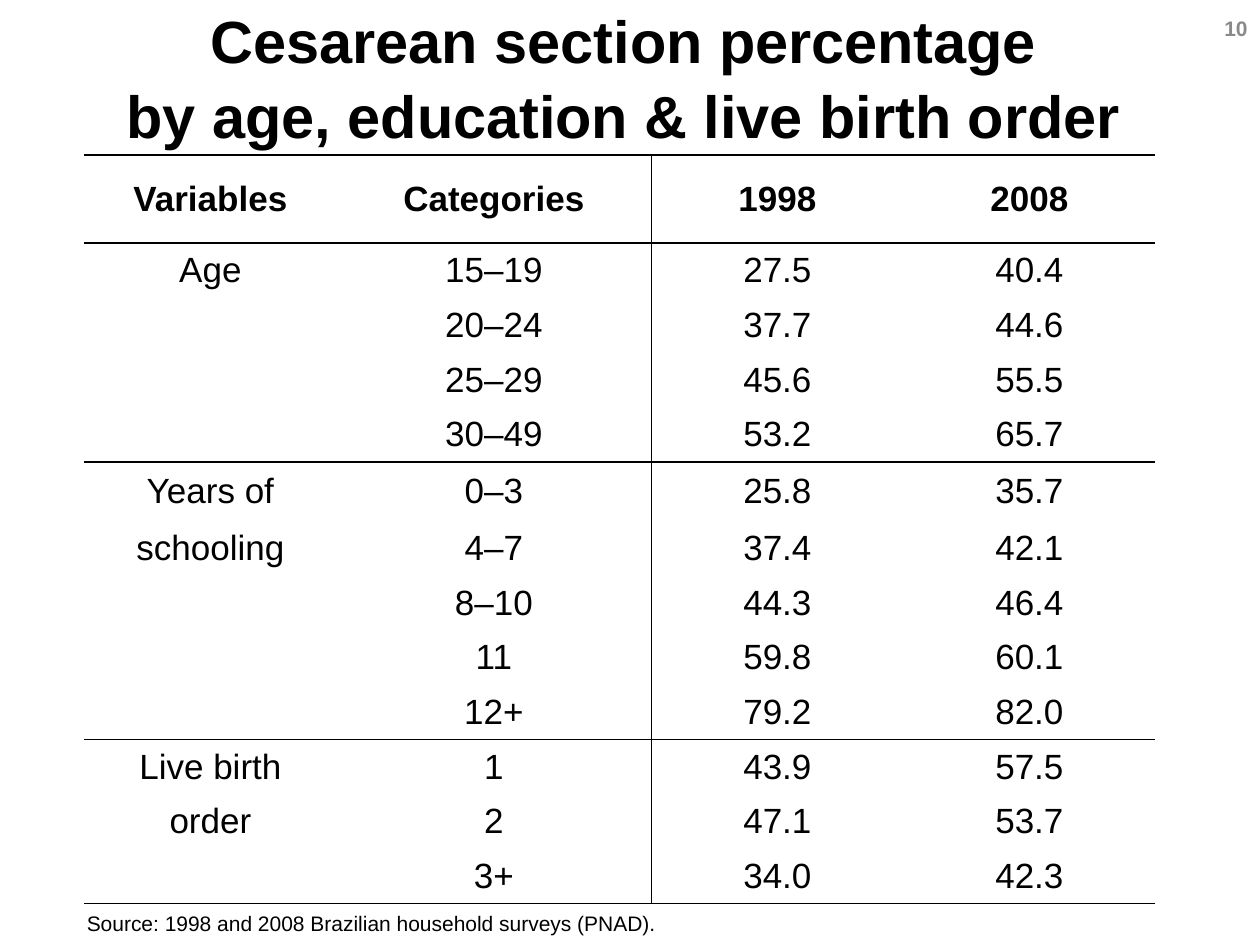
import pptx
import pptx.util
import pptx.dml.color
import pptx.enum.text
import pptx.oxml
import pptx.oxml.ns

Inches = pptx.util.Inches
Align = pptx.enum.text.PP_ALIGN
Anchor = pptx.enum.text.MSO_ANCHOR

GROUPS = [
    (["Age"], [("15–19", "27.5", "40.4"), ("20–24", "37.7", "44.6"),
               ("25–29", "45.6", "55.5"), ("30–49", "53.2", "65.7")]),
    (["Years of", "schooling"], [("0–3", "25.8", "35.7"), ("4–7", "37.4", "42.1"),
                                 ("8–10", "44.3", "46.4"), ("11", "59.8", "60.1"),
                                 ("12+", "79.2", "82.0")]),
    (["Live birth", "order"], [("1", "43.9", "57.5"), ("2", "47.1", "53.7"),
                               ("3+", "34.0", "42.3")]),
]


def color(code):
    return pptx.dml.color.RGBColor.from_string(code)


def write(frame, text, size=20, bold=False, ink="000000", align=Align.CENTER,
          space=None, after=None, hang=None):
    para = frame.paragraphs[0]
    para.text = text
    para.alignment = align
    if space:
        para.line_spacing = space
    if after:
        para.space_after = pptx.util.Pt(after)
    if hang:
        props = para._p.get_or_add_pPr()
        props.set("marL", str(Inches(hang)))
        props.set("indent", str(-Inches(hang)))
    for font in [para.font] + [run.font for run in para.runs]:
        font.name = "Arial"
        font.size = pptx.util.Pt(size)
        font.bold = bold
        font.color.rgb = color(ink)


def label(slide, box, text, anchor=Anchor.MIDDLE, **style):
    frame = slide.shapes.add_textbox(*map(Inches, box)).text_frame
    frame.word_wrap = True
    frame.vertical_anchor = anchor
    write(frame, text, **style)


def border(cell, sides):
    props = cell._tc.get_or_add_tcPr()
    for side in "LRTB":
        line = pptx.oxml.parse_xml(
            f'<a:ln{side} {pptx.oxml.ns.nsdecls("a")} w="12700"><a:noFill/></a:ln{side}>')
        if side in sides:
            line[0].getparent().replace(line[0], pptx.oxml.parse_xml(
                f'<a:solidFill {pptx.oxml.ns.nsdecls("a")}>'
                '<a:srgbClr val="000000"/></a:solidFill>'))
        props.append(line)


def fill(cell, text, bold, wide, sides):
    border(cell, sides)
    cell.fill.solid()
    cell.fill.fore_color.rgb = color("FFFFFF")
    cell.vertical_anchor = Anchor.MIDDLE
    cell.margin_left = cell.margin_right = Inches(0.1 if wide else 0.07)
    cell.margin_top = cell.margin_bottom = Inches(0.05 if wide else 0)
    write(cell.text_frame, text, bold=bold)


def grid(slide, box):
    rows = [("Variables", "Categories", "1998", "2008")]
    starts, ends = {0, 1}, {0}
    for names, lines in GROUPS:
        starts.add(len(rows))
        for i, line in enumerate(lines):
            rows.append((names[i] if i < len(names) else "", *line))
        ends.add(len(rows) - 1)

    table = slide.shapes.add_table(len(rows), 4, *map(Inches, box)).table
    table.horz_banding = table.first_row = False
    for col, width in zip(table.columns, (2, 2.5, 2, 2)):
        col.width = Inches(width)
    special = {0: 0.7, 5: 0.47}
    step = (box[3] - sum(special.values())) / (len(rows) - len(special))
    for r, row in enumerate(rows):
        table.rows[r].height = Inches(special.get(r, step))
        for c, text in enumerate(row):
            sides = ("", "R", "L", "")[c]
            sides += "T" * (r in starts) + "B" * (r in ends)
            fill(table.cell(r, c), text, r == 0, r == 0 or c == 0, sides)


def page(deck):
    slide = deck.slides.add_slide(deck.slide_layouts[6])
    label(slide, (0.25, 0.05, 9.4, 1.1),
          "Cesarean section percentage\vby age, education & live birth order",
          size=34, bold=True, space=1.05)
    label(slide, (9.49, 0, 0.51, 0.44), "10", size=12, bold=True,
          ink="898989", align=Align.RIGHT)
    grid(slide, (0.67, 1.23, 8.5, 5.94))
    label(slide, (0.59, 7.14, 4.75, 0.36),
          "Source: 1998 and 2008 Brazilian household surveys (PNAD).",
          anchor=Anchor.TOP, size=12, align=Align.JUSTIFY,
          space=1.2, after=20, hang=0.38)


def main():
    deck = pptx.Presentation()
    deck.slide_width, deck.slide_height = Inches(10), Inches(7.5)
    page(deck)
    deck.save("out.pptx")


if __name__ == "__main__":
    main()
